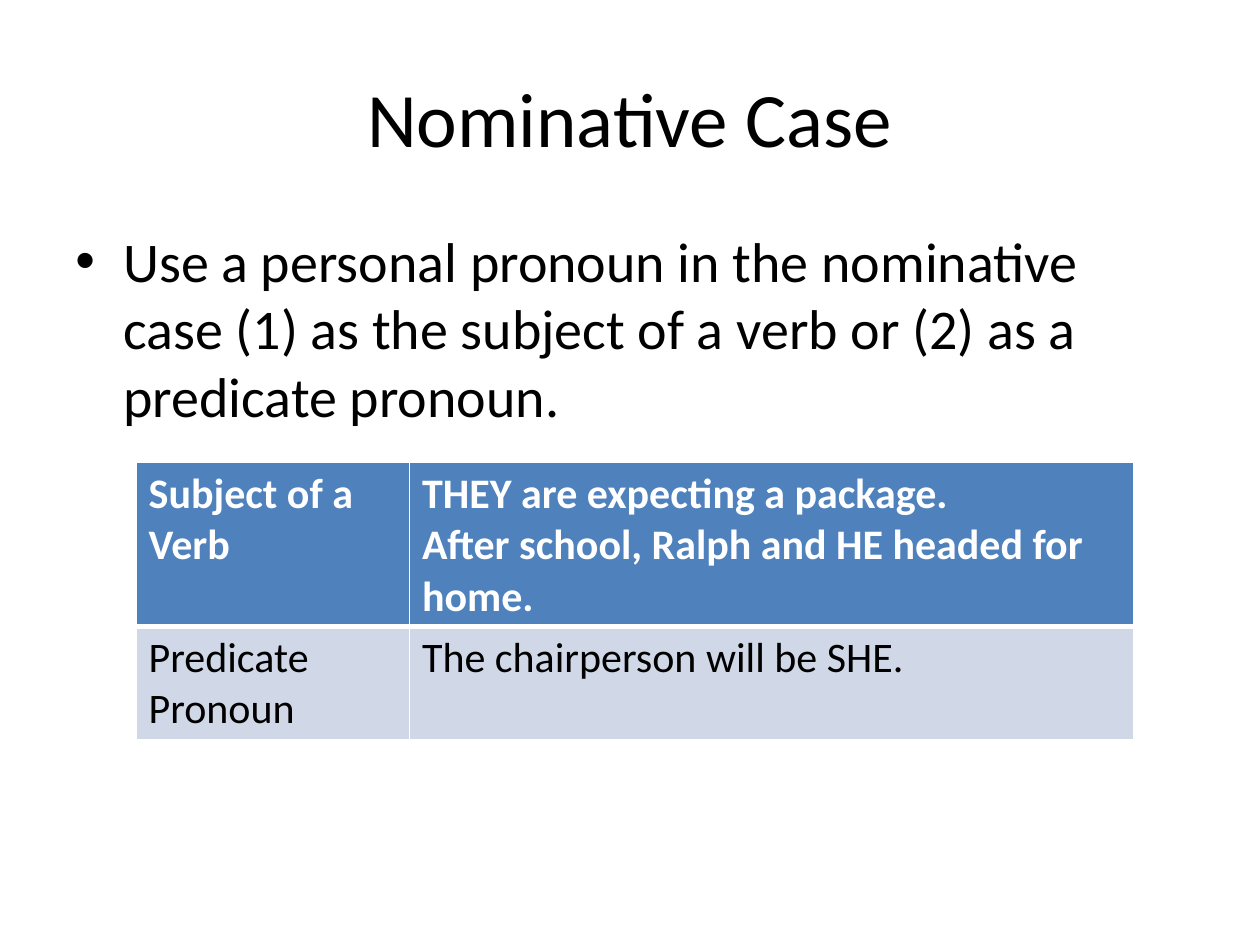
from dataclasses import dataclass

from lxml import etree
from pptx import Presentation
from pptx.dml.color import RGBColor
from pptx.enum import text as t
from pptx.oxml import ns
from pptx.util import Inches, Pt


@dataclass(frozen=True)
class Theme:
    font: str = "Calibri"
    ink: str = "000000"
    paper: str = "FFFFFF"
    header_fill: str = "4F81BD"
    row_fill: str = "D0D8E8"
    title_size: int = 44
    body_size: int = 32
    table_size: int = 24


THEME = Theme()

CASES = [
    ("Subject of a Verb",
     "THEY are expecting a package.\nAfter school, Ralph and HE headed for home."),
    ("Predicate Pronoun", "The chairperson will be SHE."),
]


def style_text(frame, size, color, bold=False):
    for paragraph in frame.paragraphs:
        for run in paragraph.runs:
            run.font.name = THEME.font
            run.font.size = Pt(size)
            run.font.bold = bold
            run.font.color.rgb = RGBColor.from_string(color)


def add_text(slide, box, words, size):
    frame = slide.shapes.add_textbox(*box).text_frame
    frame.word_wrap = True
    frame.text = words
    style_text(frame, size, THEME.ink)
    return frame


def add_title(slide, box):
    frame = add_text(slide, box, "Nominative Case", THEME.title_size)
    frame.vertical_anchor = t.MSO_ANCHOR.MIDDLE
    frame.paragraphs[0].alignment = t.PP_ALIGN.CENTER


def add_rule(slide, box):
    frame = add_text(
        slide, box,
        "Use a personal pronoun in the nominative case (1) as the subject "
        "of a verb or (2) as a predicate pronoun.",
        THEME.body_size)
    paragraph = frame.paragraphs[0]
    paragraph.space_before = Pt(0.2 * THEME.body_size)
    properties = paragraph._p.get_or_add_pPr()
    properties.set("marL", str(Inches(0.38)))
    properties.set("indent", str(Inches(-0.38)))
    etree.SubElement(properties, ns.qn("a:buFont"), typeface="Arial")
    etree.SubElement(properties, ns.qn("a:buChar"), char="•")


def set_borders(cell, bottom_width):
    """Draw 1 pt sides, with a bottom edge of its own width."""
    properties = cell._tc.get_or_add_tcPr()
    widths = {"lnL": 1, "lnR": 1, "lnT": 1, "lnB": bottom_width}
    for position, (side, width) in enumerate(widths.items()):
        line = etree.Element(ns.qn(f"a:{side}"), w=str(Pt(width)))
        fill = etree.SubElement(line, ns.qn("a:solidFill"))
        etree.SubElement(fill, ns.qn("a:srgbClr"), val=THEME.paper)
        properties.insert(position, line)


def add_case_table(slide, box):
    table = slide.shapes.add_table(len(CASES), 2, *box).table
    label_width = Inches(2.17)
    table.columns[0].width = label_width
    table.columns[1].width = box[2] - label_width
    header_height = Inches(1.3)
    table.rows[0].height = header_height
    table.rows[1].height = box[3] - header_height
    for row, entries in enumerate(CASES):
        header = row == 0
        for column, words in enumerate(entries):
            cell = table.cell(row, column)
            cell.text_frame.text = words
            style_text(cell.text_frame, THEME.table_size,
                       THEME.paper if header else THEME.ink, bold=header)
            cell.fill.solid()
            cell.fill.fore_color.rgb = RGBColor.from_string(
                THEME.header_fill if header else THEME.row_fill)
            set_borders(cell, 3 if header else 1)


def main():
    deck = Presentation()
    deck.slide_width, deck.slide_height = Inches(10), Inches(7.5)
    slide = deck.slides.add_slide(deck.slide_layouts[6])
    left, width = Inches(0.5), Inches(9)
    add_title(slide, (left, Inches(0.3), width, Inches(1.25)))
    add_rule(slide, (left, Inches(1.75), width, Inches(4.95)))
    add_case_table(slide, (Inches(1.08), Inches(3.67), Inches(7.92), Inches(2.2)))
    deck.save("out.pptx")


if __name__ == "__main__":
    main()
